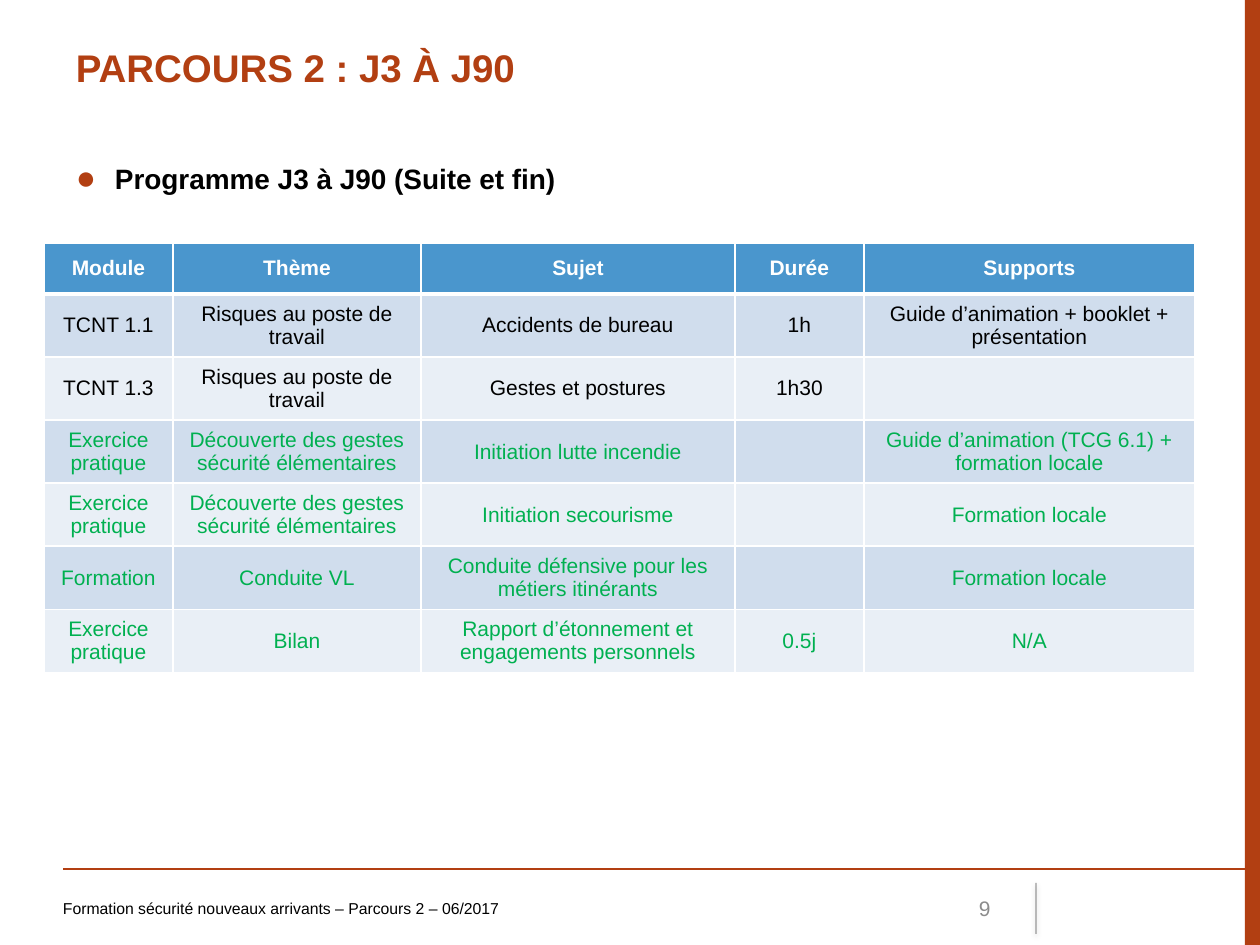
from typing import NamedTuple

from lxml.etree import SubElement as Sub
from pptx import Presentation
from pptx.dml.color import RGBColor as Rgb
from pptx.enum.shapes import MSO_CONNECTOR as Conn, MSO_SHAPE as Shape
from pptx.enum.text import MSO_ANCHOR as Anchor, PP_ALIGN as Align
from pptx.oxml import parse_xml
from pptx.oxml.ns import nsdecls, qn
from pptx.util import Emu, Pt

HUES = {
    "rust": "B23F12", "black": "000000", "white": "FFFFFF", "grey": "8C8C8C",
    "head": "4A96CD", "odd": "D0DDED", "even": "E9EFF6", "green": "00B050",
}


class Label(NamedTuple):
    text: str
    box: tuple[int, int, int, int]
    size: int
    hue: str
    bold: bool = False
    mid: bool = False
    align: Align = Align.LEFT
    inset: int = 13


class Rule(NamedTuple):
    start: tuple[int, int]
    end: tuple[int, int]
    hue: str
    width: float


class Row(NamedTuple):
    cells: tuple[str, ...]
    hue: str


LABELS = [
    Label("PARCOURS 2 : J3 À J90", (63, 38, 1133, 87), 22, "rust", bold=True),
    Label("9", (903, 883, 100, 50), 12, "grey", mid=True, align=Align.RIGHT),
    Label("Formation sécurité nouveaux arrivants – Parcours 2 – 06/2017",
          (63, 883, 766, 50), 9, "black", mid=True, inset=0),
]
TOPIC = Label("Programme J3 à J90 (Suite et fin)", (63, 155, 1133, 59), 16, "black", bold=True)
BASE = Rule((63, 869), (1260, 869), "rust", 0.75)
MARK = Rule((1036, 883), (1036, 934), "black", 0.5)

COLS = [129, 248, 314, 129, 331]
HIGH = 51
DRILL = "Exercice pratique"
RISK = "Risques au poste de travail"
BASICS = "Découverte des gestes sécurité élémentaires"
LOCAL = "Formation locale"
ROWS = [
    Row(("Module", "Thème", "Sujet", "Durée", "Supports"), "white"),
    Row(("TCNT 1.1", RISK, "Accidents de bureau", "1h",
         "Guide d’animation + booklet + présentation"), "black"),
    Row(("TCNT 1.3", RISK, "Gestes et postures", "1h30", ""), "black"),
    Row((DRILL, BASICS, "Initiation lutte incendie", "",
         "Guide d’animation (TCG 6.1) + formation locale"), "green"),
    Row((DRILL, BASICS, "Initiation secourisme", "", LOCAL), "green"),
    Row(("Formation", "Conduite VL", "Conduite défensive pour les métiers itinérants",
         "", LOCAL), "green"),
    Row((DRILL, "Bilan", "Rapport d’étonnement et engagements personnels",
         "0.5j", "N/A"), "green"),
]


def px(num: int) -> Emu:
    return Emu(round(num * 914400 / 126))


def tint(name: str) -> Rgb:
    return Rgb.from_string(HUES[name])


def style(para, size: int, hue: str, bold: bool, align: Align) -> None:
    para.alignment = align
    font = para.font
    font.name, font.size, font.bold = "Arial", Pt(size), bold
    font.color.rgb = tint(hue)


def write(slide, label: Label):
    frame = slide.shapes.add_textbox(*map(px, label.box)).text_frame
    frame.word_wrap = True
    frame.margin_left = px(label.inset)
    frame.vertical_anchor = Anchor.MIDDLE if label.mid else Anchor.TOP
    para = frame.paragraphs[0]
    para.text = label.text
    style(para, label.size, label.hue, label.bold, label.align)
    return para


def bullet(para) -> None:
    props = para._p.get_or_add_pPr()
    props.set("marL", str(px(39)))
    props.set("indent", str(-px(39)))
    marks = (
        f'<a:buClr {nsdecls("a")}><a:srgbClr val="{HUES["rust"]}"/></a:buClr>',
        f'<a:buSzPct {nsdecls("a")} val="120000"/>',
        f'<a:buFont {nsdecls("a")} typeface="Arial"/>',
        f'<a:buChar {nsdecls("a")} char="●"/>',
    )
    for spot, mark in enumerate(marks):
        props.insert(spot, parse_xml(mark))


def draw(slide, rule: Rule):
    line = slide.shapes.add_connector(Conn.STRAIGHT, *map(px, rule.start + rule.end))
    line.line.color.rgb = tint(rule.hue)
    line.line.width = Pt(rule.width)
    return line, Sub(line._element.spPr, qn("a:effectLst"))


def edge(cell, side: str, width: int, spot: int) -> None:
    cell._tc.get_or_add_tcPr().insert(spot, parse_xml(
        f'<a:ln{side} {nsdecls("a")} w="{Pt(width)}"><a:solidFill>'
        f'<a:srgbClr val="{HUES["white"]}"/></a:solidFill></a:ln{side}>'))


def grid(slide) -> None:
    table = slide.shapes.add_table(
        len(ROWS), len(COLS), px(44), px(243), px(sum(COLS)), px(HIGH * len(ROWS))).table
    for col, wide in zip(table.columns, COLS):
        col.width = px(wide)
    for r, row in enumerate(ROWS):
        table.rows[r].height = px(HIGH)
        back = "head" if r == 0 else "odd" if r % 2 else "even"
        for c, text in enumerate(row.cells):
            cell = table.cell(r, c)
            cell.text = text
            cell.vertical_anchor = Anchor.MIDDLE
            cell.fill.solid()
            cell.fill.fore_color.rgb = tint(back)
            style(cell.text_frame.paragraphs[0], 12, row.hue, r == 0, Align.CENTER)
            # The rule under the header is thicker
            widths = {"L": 1, "R": 1, "T": 3 if r == 1 else 1, "B": 3 if r == 0 else 1}
            for spot, (side, width) in enumerate(widths.items()):
                edge(cell, side, width, spot)


def main() -> None:
    deck = Presentation()
    deck.slide_width, deck.slide_height = px(1260), px(945)
    slide = deck.slides.add_slide(deck.slide_layouts[6])

    # Side bar
    bar = slide.shapes.add_shape(Shape.RECTANGLE, *map(px, (1245, 0, 15, 945)))
    bar.shadow.inherit = False
    bar.fill.solid()
    bar.fill.fore_color.rgb = tint("rust")
    bar.line.fill.background()

    # Footer rules, the short one translucent with a soft shadow
    draw(slide, BASE)
    mark, glow = draw(slide, MARK)
    hue = mark._element.spPr.find(".//" + qn("a:srgbClr"))
    Sub(hue, qn("a:alpha"), val="70000")
    glow.append(parse_xml(
        f'<a:outerShdw {nsdecls("a")} blurRad="{Pt(3.1)}" dist="{Pt(1.6)}" dir="5400000">'
        f'<a:srgbClr val="{HUES["black"]}"><a:alpha val="38000"/></a:srgbClr></a:outerShdw>'))

    # Title, page number, footer and topic
    for label in LABELS:
        write(slide, label)
    topic = write(slide, TOPIC)
    bullet(topic)

    # Programme table
    grid(slide)
    deck.save("out.pptx")


if __name__ == "__main__":
    main()
